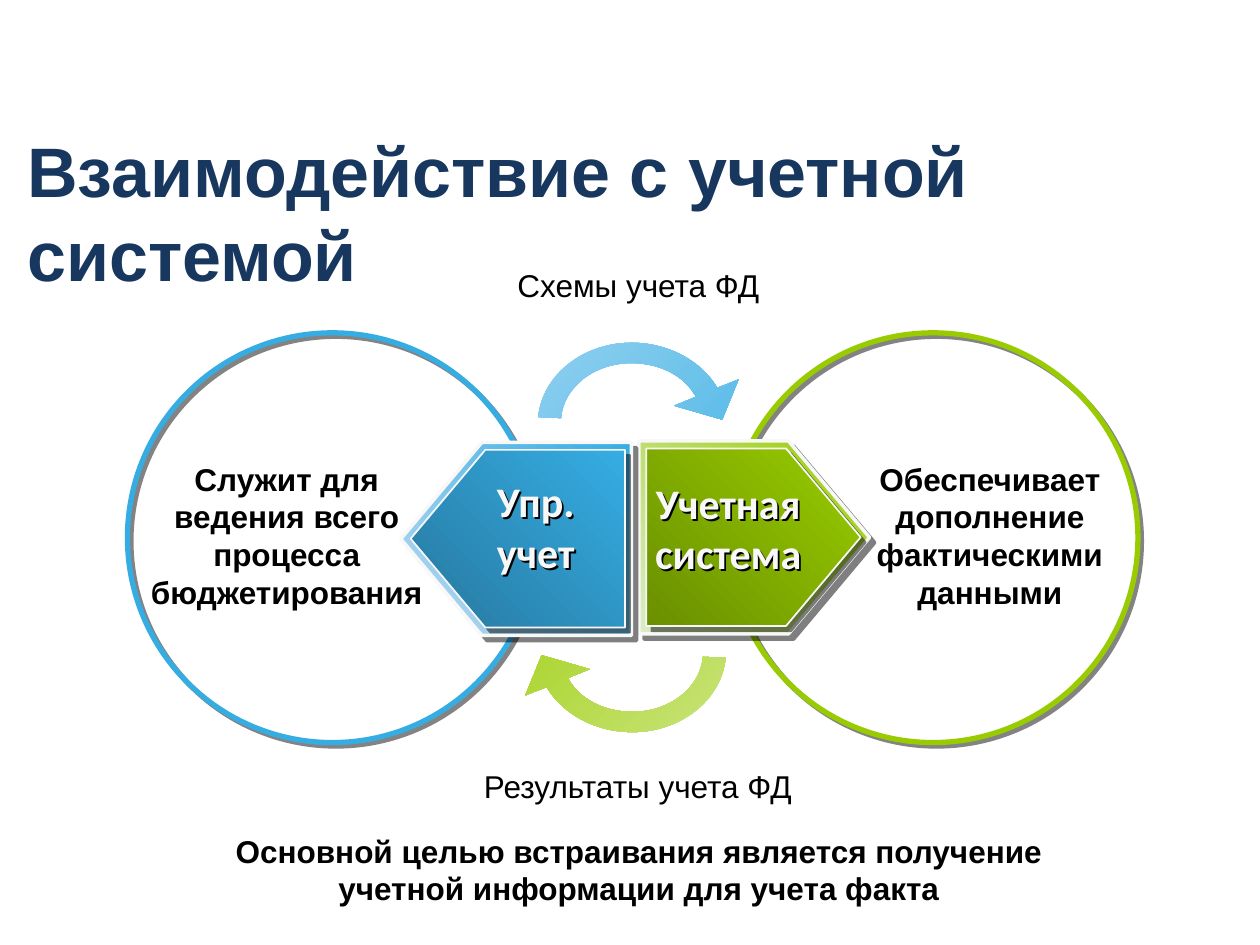
from lxml import etree
from pptx import Presentation
from pptx import util as u
from pptx.dml.color import RGBColor
from pptx.enum import shapes, text
from pptx.oxml import ns

HEX = {
    "title": "17375E", "ink": "000000", "pale": "F8F8F8", "shade": "080808",
    "blue": "35ADE3", "deep": "27789F", "sky": "BDDAF1", "mist": "74C4EC",
    "green": "99CC00", "moss": "6A9000", "lime": "DCECCA", "leaf": "BADD59",
    "white": "FFFFFF",
}
BODY = {"name": "Arial", "size": u.Pt(18), "bold": True}
NOTE = {**BODY, "bold": False}
HEAD = {**BODY, "size": u.Pt(40)}
LABEL = {"name": "Calibri", "size": u.Pt(24), "bold": True}

SIDES = [
    {"box": (14.68, 6.71, 8.26, 8.26), "ring": "green", "flip": False,
     "body": (2.52, 2.43, 5.51, 3.33), "label": (-1.78, 2.79, 3.56, 2.31),
     "outer": (-1.8, 2.18, 4.65, 3.89), "inner": (-1.65, 2.33, 4.32, 3.58),
     "rim": ("lime", "green"), "core": ("moss", "green"), "angle": 45,
     "name": "Учетная система",
     "words": "Обеспечивает дополнение фактическими данными"},
    {"box": (2.57, 6.71, 8.26, 8.26), "ring": "blue", "flip": True,
     "body": (0.15, 2.43, 6.12, 3.33), "label": (6.45, 2.76, 3.56, 2.31),
     "outer": (5.51, 2.21, 4.65, 3.89), "inner": (5.71, 2.36, 4.32, 3.58),
     "rim": ("blue", "sky"), "core": ("blue", "deep"), "angle": 315,
     "name": "Упр. учет",
     "words": "Служит для ведения всего процесса бюджетирования"},
]
ARROW = [
    ((3.18, 1.09),),
    ((2.95, 0.66), (2.44, 0.41), (1.88, 0.41)),
    ((1.14, 0.41), (0.51, 0.89), (0.46, 1.52)),
    ((0, 1.5),),
    ((0.08, 0.66), (0.89, 0), (1.88, 0)),
    ((2.62, 0), (3.28, 0.36), (3.61, 0.91)),
    ((4.04, 0.74),), ((3.71, 1.55),), ((2.74, 1.27),),
]


def rgb(key):
    return RGBColor.from_string(HEX[key])


def cm(box):
    return [u.Cm(v) for v in box]


def inside(box, part):
    return (box[0] + part[0], box[1] + part[1], *part[2:])


def fade(tone, alpha):
    etree.SubElement(tone, ns.qn("a:alpha"), val=str(alpha * 1000))


def shade(shape, key, dist, alpha=50):
    fx = etree.SubElement(shape._element.spPr, ns.qn("a:effectLst"))
    out = etree.SubElement(fx, ns.qn("a:outerShdw"), dist=str(u.Pt(dist)),
                           dir="2700000", algn="ctr", rotWithShape="0")
    fade(etree.SubElement(out, ns.qn("a:srgbClr"), val=HEX[key]), alpha)


def blend(shape, keys, angle, alpha=100):
    shape.fill.gradient()
    shape.fill.gradient_angle = angle
    for stop, key in zip(shape.fill.gradient_stops, keys):
        stop.color.rgb = rgb(key)
    for tone in shape._element.spPr.iter(ns.qn("a:srgbClr")):
        fade(tone, alpha)


def write(frame, words, style, key, align):
    frame.word_wrap = True
    frame.auto_size = text.MSO_AUTO_SIZE.NONE
    para = frame.paragraphs[0]
    para.alignment = align
    run = para.add_run()
    run.text = words
    for name, value in style.items():
        setattr(run.font, name, value)
    run.font.color.rgb = rgb(key)


def add_text(slide, box, words, style=BODY, key="ink"):
    label = slide.shapes.add_textbox(*cm(box))
    write(label.text_frame, words, style, key, text.PP_ALIGN.CENTER)
    return label


def add_sheet(slide, box):
    sheet = slide.shapes.add_shape(shapes.MSO_SHAPE.RECTANGLE, *cm(box))
    sheet.shadow.inherit = False
    sheet.fill.solid()
    sheet.fill.fore_color.rgb = rgb("white")
    for tone in sheet._element.spPr.iter(ns.qn("a:srgbClr")):
        fade(tone, 81)
    sheet.line.fill.background()
    slide.shapes._spTree.insert(2, sheet._element)


def add_head(slide, box, words):
    title = slide.shapes.title
    title.left, title.top, title.width, title.height = cm(box)
    title.text_frame.vertical_anchor = text.MSO_ANCHOR.MIDDLE
    write(title.text_frame, words, HEAD, "title", text.PP_ALIGN.LEFT)


def add_ring(slide, box, key):
    ring = slide.shapes.add_shape(shapes.MSO_SHAPE.OVAL, *cm(box))
    ring.fill.background()
    ring.line.color.rgb = rgb(key)
    ring.line.width = u.Pt(3)
    shade(ring, "shade", 2.8)


def add_tag(slide, box, keys, angle, flip, width):
    tag = slide.shapes.add_shape(shapes.MSO_SHAPE.PENTAGON, *cm(box))
    tag.adjustments[0] = 0.42
    if flip:
        tag._element.spPr.xfrm.set("flipH", "1")
    blend(tag, keys, angle)
    tag.line.color.rgb = rgb("pale")
    tag.line.width = u.Pt(width)
    shade(tag, "ink", 4.2)


def add_side(slide, box, side):
    add_ring(slide, box, side["ring"])
    add_text(slide, inside(box, side["body"]), side["words"])
    for part, tint, width in (("outer", "rim", 2), ("inner", "core", 1)):
        add_tag(slide, inside(box, side[part]), side[tint], side["angle"],
                side["flip"], width)
    label = add_text(slide, inside(box, side["label"]), side["name"], LABEL, "pale")
    shade(label, "ink", 1.5, 100)


def bend(shape):
    lines = iter(list(shape._element.spPr.iter(ns.qn("a:lnTo"))))
    for part in ARROW[1:]:
        group = [next(lines) for dot in part]
        if len(group) == 3:
            arc = etree.Element(ns.qn("a:cubicBezTo"))
            group[0].addprevious(arc)
            for line in group:
                arc.append(line[0])
                line.getparent().remove(line)


def add_arrow(slide, box, keys, turn):
    left, top, wide, high = box
    dots = [dot for part in ARROW for dot in part]
    if turn:
        dots = [(wide - x, high - y) for x, y in dots]
    first, *rest = [cm((left + x, top + y)) for x, y in dots]
    edge = slide.shapes.build_freeform(*first)
    edge.add_line_segments(rest)
    arrow = edge.convert_to_shape()
    bend(arrow)
    arrow.shadow.inherit = False
    blend(arrow, keys, 135 if turn else 315, 80)
    arrow.line.fill.background()


def main():
    deck = Presentation()
    deck.slide_width, deck.slide_height = cm((25.4, 19.05))
    slide = deck.slides.add_slide(deck.slide_layouts[5])
    add_sheet(slide, (0, 2.54, 25.4, 16.51))
    add_head(slide, (0.3, 3.33, 24.8, 1.88), "Взаимодействие с учетной системой")
    for side in SIDES:
        add_side(slide, side["box"], side)
    add_arrow(slide, (10.85, 6.91, 4.04, 1.55), ("mist", "blue"), False)
    add_arrow(slide, (10.59, 13.21, 4.04, 1.55), ("leaf", "green"), True)
    add_text(slide, (10.01, 5.23, 5.72, 1.02), "Схемы учета ФД", NOTE)
    add_text(slide, (9.09, 15.34, 7.54, 1.02), "Результаты учета ФД", NOTE)
    add_text(slide, (4.14, 16.64, 17.48, 1.8),
             "Основной целью встраивания является получение "
             "учетной информации для учета факта")
    deck.save("out.pptx")


if __name__ == "__main__":
    main()
